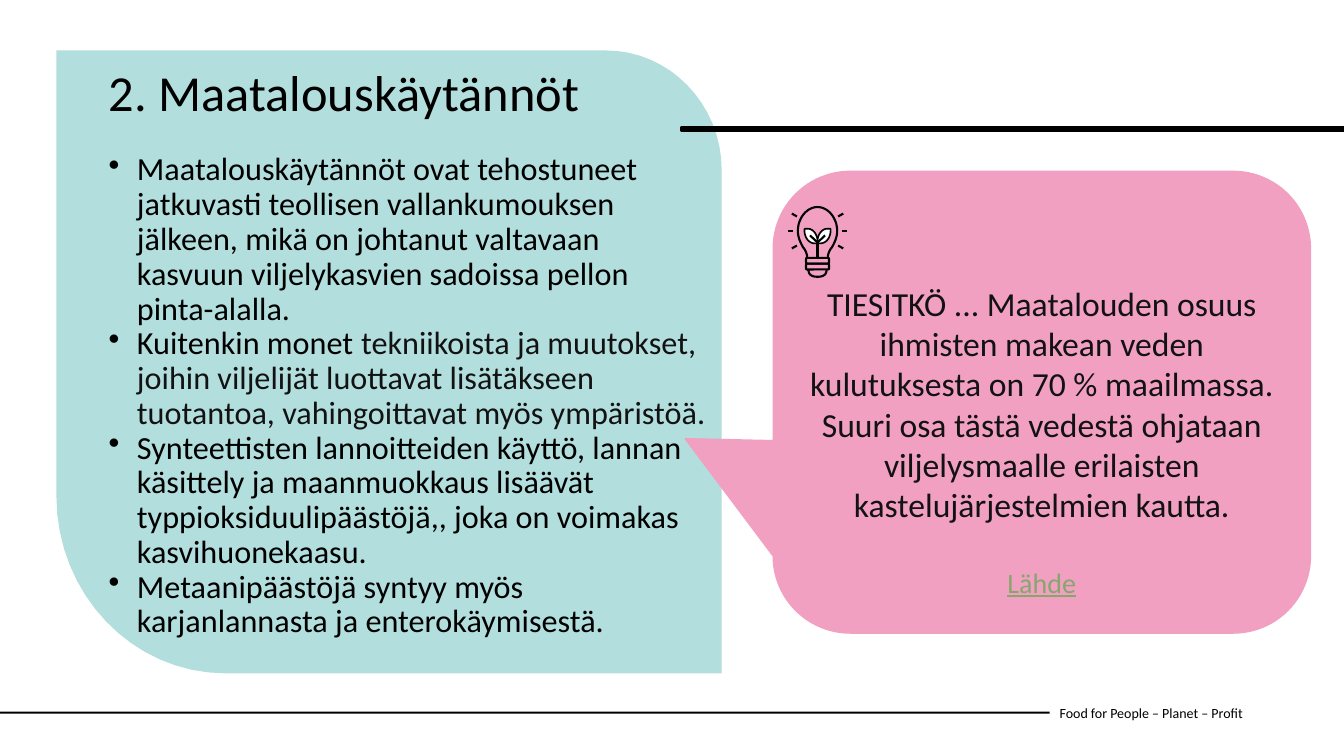
from dataclasses import dataclass

from lxml import etree
from pptx import Presentation, util as u
from pptx.dml import color
from pptx.enum import shapes, text
from pptx.oxml import ns


@dataclass(frozen=True)
class Theme:
    font: str = "Calibri"
    black: str = "000000"
    ink: str = "121212"
    white: str = "FFFFFF"
    teal: str = "B2DEDD"
    pink: str = "F1A0C2"
    green: str = "87A66E"
    title_size: int = 36
    fact_size: int = 24
    body_size: int = 23
    source_size: int = 20
    footer_size: int = 10


def trace(outline, steps=16):
    """Turn points (2 numbers) and cubic curves (6 numbers) into a list of points."""
    points = [outline[0]]
    for part in outline[1:]:
        if len(part) == 2:
            points.append(part)
            continue
        corners = [points[-1], part[:2], part[2:4], part[4:]]
        for step in range(1, steps + 1):
            t = step / steps
            weights = ((1 - t) ** 3, 3 * t * (1 - t) ** 2, 3 * t * t * (1 - t), t ** 3)
            points.append(tuple(sum(w * c[axis] for w, c in zip(weights, corners))
                                for axis in (0, 1)))
    return points


def mirror(points):
    return [(-x, y) for x, y in reversed(points)]


class SlideBuilder:
    """Places elements on a grid of 100 columns by 100 rows."""

    def __init__(self, presentation, theme):
        self.theme = theme
        self.column = presentation.slide_width / 100
        self.row = presentation.slide_height / 100
        self.slide = presentation.slides.add_slide(presentation.slide_layouts[5])

    def place(self, *lengths):
        """Alternating columns and rows, as slide lengths."""
        return [u.Emu(round(length * (self.row if index % 2 else self.column)))
                for index, length in enumerate(lengths)]

    def paint(self, shape, fill=None, line=None, width=1):
        shape.shadow.inherit = False
        for part, value in ((shape.fill, fill), (shape.line.fill, line)):
            if value:
                part.solid()
                part.fore_color.rgb = color.RGBColor.from_string(value)
            else:
                part.background()
        if line:
            shape.line.width = u.Pt(width)
        return shape

    def style(self, font, size, tint):
        font.name, font.size = self.theme.font, u.Pt(size)
        font.color.rgb = color.RGBColor.from_string(tint)

    def add_runs(self, paragraph, runs, size):
        """Put (wording, colour) runs in one paragraph."""
        self.style(paragraph.font, size, runs[0][1])
        for wording, tint in runs:
            run = paragraph.add_run()
            run.text = wording
            if tint != runs[0][1]:
                run.font.color.rgb = color.RGBColor.from_string(tint)

    def title(self, wording, box):
        title = self.slide.shapes.title
        title.left, title.top, title.width, title.height = self.place(*box)
        title.element.getparent().append(title.element)  # bring to front
        frame = title.text_frame
        frame.auto_size = text.MSO_AUTO_SIZE.NONE
        frame.vertical_anchor = text.MSO_ANCHOR.TOP
        paragraph = frame.paragraphs[0]
        paragraph.alignment = text.PP_ALIGN.LEFT
        paragraph.line_spacing = 0.9
        self.add_runs(paragraph, [(wording, self.theme.black)], self.theme.title_size)

    def text_box(self, paragraphs, box, size, anchor=text.MSO_ANCHOR.TOP, bullets=False):
        shape = self.slide.shapes.add_textbox(*self.place(*box))
        frame = shape.text_frame
        frame.word_wrap = True
        frame.vertical_anchor = anchor
        for index, runs in enumerate(paragraphs):
            paragraph = frame.add_paragraph() if index else frame.paragraphs[0]
            self.add_runs(paragraph, runs, size)
            if bullets:
                self.bullet(paragraph)
        return shape

    def bullet(self, paragraph):
        paragraph.line_spacing = 0.9
        properties = paragraph._p.get_or_add_pPr()
        indent = u.Inches(0.28)
        properties.set("marL", str(indent))
        properties.set("indent", str(-indent))
        mark = etree.Element(ns.qn("a:buChar"), char="•")
        properties.find(ns.qn("a:lnSpc")).addnext(mark)

    def shape(self, kind, box, **look):
        return self.paint(self.slide.shapes.add_shape(kind, *self.place(*box)), **look)

    def outline(self, points, close=True, **look):
        start, *others = [self.place(*point) for point in points]
        builder = self.slide.shapes.build_freeform(*start, scale=1.0)
        builder.add_line_segments(others, close=close)
        return self.paint(builder.convert_to_shape(), **look)

    def line(self, start, end, width):
        connector = self.slide.shapes.add_connector(
            shapes.MSO_CONNECTOR.STRAIGHT, *self.place(*start, *end))
        connector.line.width = u.Pt(width)
        connector.line.color.rgb = color.RGBColor.from_string(self.theme.black)
        etree.SubElement(connector._element.spPr, ns.qn("a:effectLst"))
        return connector

    def callout(self, fact, source, box):
        theme = self.theme
        shape = self.shape(shapes.MSO_SHAPE.ROUNDED_RECTANGULAR_CALLOUT, box,
                           fill=theme.pink, line=theme.pink)
        for index, value in enumerate((-0.664, 0.079, 0.167)):
            shape.adjustments[index] = value
        frame = shape.text_frame
        frame.word_wrap = True
        frame.vertical_anchor = text.MSO_ANCHOR.TOP
        frame.margin_top = u.Inches(0.88)
        first, last = frame.paragraphs[0], frame.add_paragraph()
        self.add_runs(first, [(fact, theme.ink)], theme.fact_size)
        self.add_runs(last, [(source, theme.green)], theme.source_size)
        last.font.underline = True
        last.space_before = u.Pt(29)
        for paragraph in (first, last):
            paragraph.alignment = text.PP_ALIGN.CENTER

    def bulb_icon(self, centre, top, half_width, height):
        """A bulb with a seedling, mirrored about its centre column."""
        black, white = self.theme.black, self.theme.white

        def fit(points):
            return [(centre + x * half_width, top + y * height) for x, y in points]

        # Glass and cap
        glass = trace([(0, 0.02), (-0.35, 0.02, -0.65, 0.17, -0.65, 0.35),
                       (-0.65, 0.43, -0.57, 0.51, -0.47, 0.58),
                       (-0.4, 0.61, -0.34, 0.67, -0.34, 0.72)])
        cap = trace([(-0.3, 0.88), (-0.3, 0.95, -0.2, 0.98, 0, 0.98)])
        for points in (mirror(glass) + glass[1:], cap + mirror(cap)[1:]):
            self.outline(fit(points), close=False, line=black, width=1.5)
        # Screw thread
        for y in (0.72, 0.8):
            self.shape(shapes.MSO_SHAPE.ROUNDED_RECTANGLE,
                       (centre - 0.38 * half_width, top + y * height,
                        0.76 * half_width, 0.08 * height), line=black, width=1.5)
        # Leaves, veins and rays on both sides
        leaf = trace([(0, 0.49), (0, 0.39, -0.17, 0.32, -0.3, 0.32), (-0.43, 0.32),
                      (-0.45, 0.44, -0.28, 0.52, -0.1, 0.52), (0, 0.52)])
        strokes = [[(-0.02, 0.5), (-0.25, 0.41)], [(-0.98, 0.35), (-0.8, 0.35)],
                   [(-0.85, 0.59), (-0.68, 0.55)], [(-0.85, 0.11), (-0.68, 0.15)]]
        for side in (list, mirror):
            self.outline(fit(side(leaf)), fill=white, line=black, width=1.2)
            for stroke in strokes:
                self.line(*fit(side(stroke)), 1.5)
        # Stem
        self.line(*fit([(0, 0.48), (0, 0.72)]), 1.5)


def main():
    presentation = Presentation()
    presentation.slide_width, presentation.slide_height = u.Inches(13.33), u.Inches(7.5)
    theme = Theme()
    black, ink = theme.black, theme.ink
    page = SlideBuilder(presentation, theme)
    # Footer
    footer = page.text_box([[("Food for People – Planet – Profit", black)]],
                           (78.1, 91.6, 20.5, 5.33), theme.footer_size, text.MSO_ANCHOR.MIDDLE)
    page.line((0, 94.27), (78.1, 94.27), 1.5).end_connect(footer, 1)
    # Panel and rule
    page.outline(trace([(53.7, 89.07), (16.8, 89.07), (9.83, 89.07, 4.2, 78.53, 4.2, 65.6),
                        (4.2, 6.67), (45.08, 6.67), (49.8, 6.67, 53.7, 13.73, 53.7, 22.53)]),
                 fill=theme.teal)
    page.shape(shapes.MSO_SHAPE.RECTANGLE, (50.7, 16.8, 49.3, 0.53),
               fill=black, line=black, width=1.93)
    # Title and bullets
    page.text_box([
        [("Maatalouskäytännöt ovat tehostuneet jatkuvasti teollisen vallankumouksen jälkeen, "
          "mikä on johtanut valtavaan kasvuun viljelykasvien sadoissa pellon pinta-alalla.", black)],
        [("Kuitenkin monet", black),
         (" tekniikoista ja muutokset, joihin viljelijät luottavat lisätäkseen tuotantoa, "
          "vahingoittavat myös ympäristöä.", ink)],
        [("Synteettisten lannoitteiden käyttö, lannan käsittely ja maanmuokkaus lisäävät "
          "typpioksiduulipäästöjä,, joka on voimakas kasvihuonekaasu.", black)],
        [("Metaanipäästöjä syntyy myös karjanlannasta ja enterokäymisestä.", black)],
    ], (7.35, 19.6, 46.35, 49.2), theme.body_size, bullets=True)
    page.title("2. Maatalouskäytännöt", (7.35, 8.27, 40.95, 14.53))
    # Fact callout
    page.callout("TIESITKÖ ... Maatalouden osuus ihmisten makean veden kulutuksesta on 70 % "
                 "maailmassa. Suuri osa tästä vedestä ohjataan viljelysmaalle erilaisten "
                 "kastelujärjestelmien kautta.", "Lähde", (57.53, 22.67, 39.97, 61.07))
    page.bulb_icon(60.83, 27.2, 2.25, 9.6)

    presentation.save("out.pptx")


if __name__ == "__main__":
    main()
